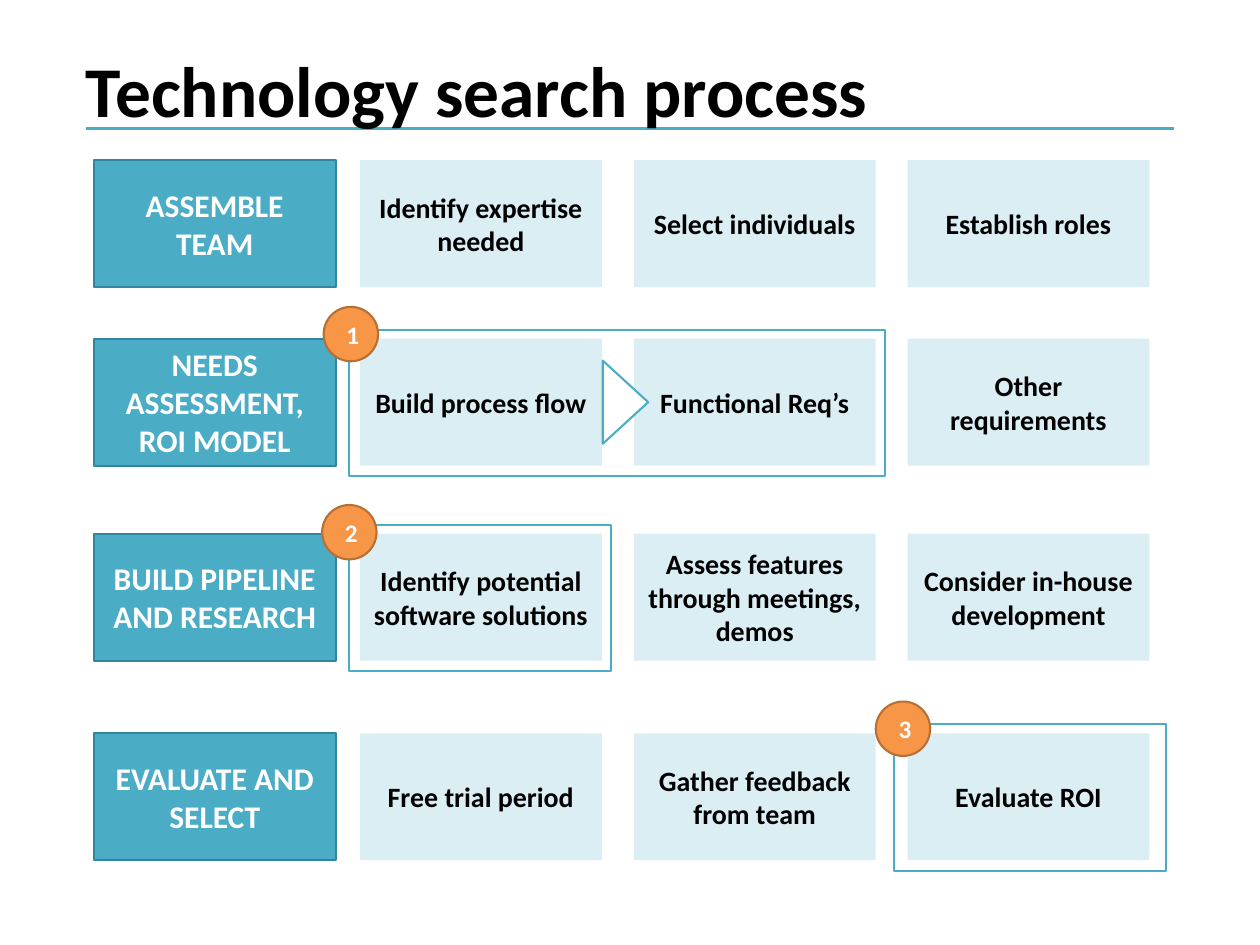
"""Builds the technology search process slide."""
import pptx
import pptx.dml.color
import pptx.enum.shapes
import pptx.enum.text
import pptx.oxml.xmlchemy
import pptx.util
from lxml import etree
from pptx.util import Inches

SHAPE = pptx.enum.shapes.MSO_SHAPE
TEAL = "4BACC6"
WIDE, HIGH = 1.6, 0.84
LEFTS = (0.62, 2.38, 4.19, 6)
ROWS = (
    (1.06, "ASSEMBLE TEAM", "Identify expertise needed",
     "Select individuals", "Establish roles"),
    (2.24, "NEEDS ASSESSMENT, ROI MODEL", "Build process flow",
     "Functional Req’s", "Other requirements"),
    (3.53, "BUILD PIPELINE AND RESEARCH",
     "Identify potential software solutions",
     "Assess features through meetings, demos",
     "Consider in-house development"),
    (4.85, "EVALUATE AND SELECT", "Free trial period",
     "Gather feedback from team", "Evaluate ROI"),
)
FRAMES = ((2.31, 2.18, 3.54), (2.31, 3.47, 1.73), (5.91, 4.79, 1.8))
BADGES = ((2.14, 2.03), (2.13, 3.34), (5.79, 4.64))


def color(code):
    """Return the colour for a hex string."""
    return pptx.dml.color.RGBColor.from_string(code)


def write(shape, text, size, code):
    """Put bold text in the middle of a shape."""
    frame = shape.text_frame
    frame.text = text
    frame.word_wrap = True
    frame.vertical_anchor = pptx.enum.text.MSO_ANCHOR.MIDDLE
    para = frame.paragraphs[0]
    para.alignment = pptx.enum.text.PP_ALIGN.CENTER
    font = para.runs[0].font
    font.name = "Calibri"
    font.size = pptx.util.Pt(size)
    font.bold = True
    font.color.rgb = color(code)
    return para


def draw(slide, kind, box, fill=None, line=None):
    """Add a flat shape with an optional fill and outline."""
    shape = slide.shapes.add_shape(kind, *map(Inches, box))
    shape.shadow.inherit = False
    if fill:
        shape.fill.solid()
        shape.fill.fore_color.rgb = color(fill)
    else:
        shape.fill.background()
    if line:
        shape.line.color.rgb = color(line)
        shape.line.width = pptx.util.Pt(1)
    else:
        shape.line.fill.background()
    return shape


def head(slide, text):
    """Add the title and the rule beneath it."""
    kind = pptx.enum.shapes.MSO_CONNECTOR.STRAIGHT
    ends = map(Inches, (0.57, 0.85, 7.76, 0.85))
    rule = slide.shapes.add_connector(kind, *ends)
    rule.line.color.rgb = color(TEAL)
    rule.line.width = pptx.util.Pt(1.5)
    etree.SubElement(rule.element.spPr, pptx.oxml.ns.qn("a:effectLst"))
    area = map(Inches, (0.47, 0.23, 7.19, 0.79))
    para = write(slide.shapes.add_textbox(*area), text, 34, "000000")
    para.alignment = pptx.enum.text.PP_ALIGN.LEFT
    para.line_spacing = 0.9


def tile(slide, left, top, text, stage):
    """Add a stage box or one of its step boxes."""
    fill, line, size, ink = (
        (TEAL, "31859C", 15, "FFFFFF") if stage
        else ("DBEEF4", None, 13.3, "000000"))
    box = (left, top, WIDE, HIGH)
    shape = draw(slide, SHAPE.RECTANGLE, box, fill, line)
    write(shape, text, size, ink)
    frame = shape.text_frame
    frame.margin_left = frame.margin_right = Inches(0.08)
    frame.margin_top = frame.margin_bottom = Inches(0.04)


def badge(slide, left, top, label):
    """Add a numbered circle."""
    box = (left, top, 0.36, 0.36)
    shape = draw(slide, SHAPE.OVAL, box, "F79646", "B76F34")
    write(shape, label, 12, "FFFFFF")


def main():
    """Build and save the slide."""
    deck = pptx.Presentation()
    deck.slide_width, deck.slide_height = Inches(8.33), Inches(6.25)
    slide = deck.slides.add_slide(deck.slide_layouts[6])
    head(slide, "Technology search process")
    for top, *texts in ROWS:
        for left, text in zip(LEFTS, texts):
            tile(slide, left, top, text, left == LEFTS[0])
    for left, top, width in FRAMES:
        draw(slide, SHAPE.RECTANGLE, (left, top, width, 0.97), line=TEAL)
    arrow = draw(slide, SHAPE.ISOSCELES_TRIANGLE,
                 (3.86, 2.51, 0.55, 0.3), "FFFFFF", TEAL)
    arrow.rotation = 90
    for num, (left, top) in enumerate(BADGES, 1):
        badge(slide, left, top, str(num))
    deck.save("out.pptx")


if __name__ == "__main__":
    main()
